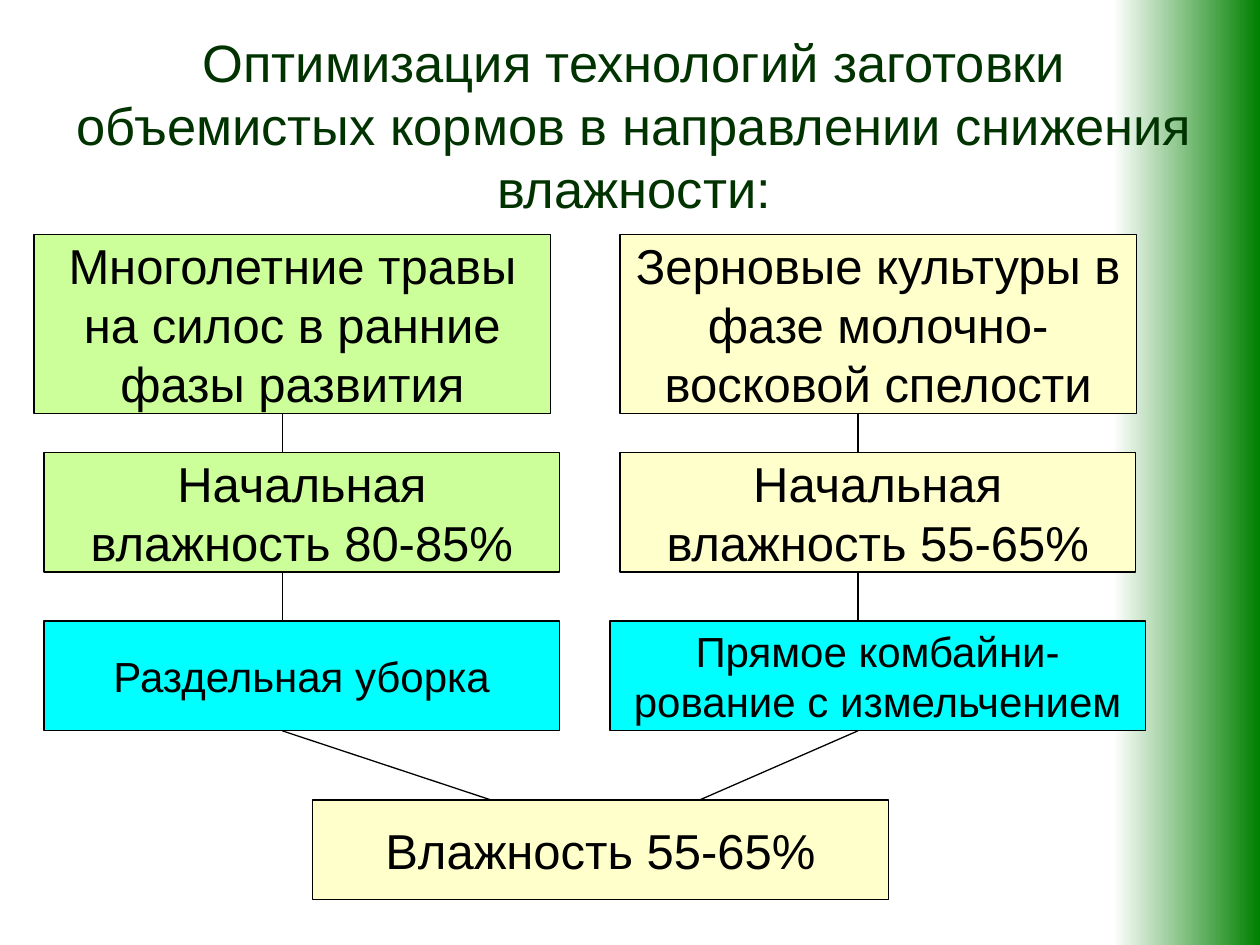
"""Build a slide on lowering moisture in bulk feed harvesting."""
from lxml import etree
from pptx import Presentation
from pptx.dml.color import RGBColor
from pptx.enum.shapes import MSO_CONNECTOR, MSO_SHAPE
from pptx.enum.text import MSO_ANCHOR, PP_ALIGN
from pptx.oxml.ns import qn
from pptx.util import Inches, Pt

WHITE = RGBColor(0xFF, 0xFF, 0xFF)
BLACK = RGBColor(0x00, 0x00, 0x00)
BAND_GREEN = RGBColor(0x00, 0x80, 0x00)
TITLE_GREEN = RGBColor(0x00, 0x33, 0x00)
LIME = RGBColor(0xCC, 0xFF, 0x99)
CREAM = RGBColor(0xFF, 0xFF, 0xCC)
CYAN = RGBColor(0x00, 0xFF, 0xFF)

deck = Presentation()
deck.slide_width = Inches(10)
deck.slide_height = Inches(7.5)
page = deck.slides.add_slide(deck.slide_layouts[6])


def write(box, text, size=28, color=BLACK):
    frame = box.text_frame
    frame.word_wrap = True
    frame.vertical_anchor = MSO_ANCHOR.MIDDLE
    para = frame.paragraphs[0]
    para.alignment = PP_ALIGN.CENTER
    span = para.add_run()
    span.text = text
    span.font.name = "Arial"
    span.font.size = Pt(size)
    span.font.color.rgb = color


band = page.shapes.add_shape(
    MSO_SHAPE.RECTANGLE, Inches(8.83), Inches(0), Inches(1.17), Inches(7.5)
)
band.shadow.inherit = False
band.line.fill.background()
band.fill.gradient()
band.fill.gradient_angle = 0
for stop, color in zip(band.fill.gradient_stops, (WHITE, BAND_GREEN)):
    stop.color.rgb = color

title = page.shapes.add_textbox(Inches(0.35), Inches(0.21), Inches(9.37), Inches(1.55))
write(
    title,
    "Оптимизация технологий заготовки объемистых кормов в направлении снижения влажности:",
    size=30,
    color=TITLE_GREEN,
)

steps = [
    (0.27, 1.86, 4.1, 1.42, LIME, 28, "Многолетние травы на силос в ранние фазы развития"),
    (0.35, 3.59, 4.09, 0.95, LIME, 28, "Начальная влажность 80-85%"),
    (0.35, 4.93, 4.09, 0.87, CYAN, 24, "Раздельная уборка"),
    (4.92, 1.86, 4.1, 1.42, CREAM, 28, "Зерновые культуры в фазе молочно-восковой спелости"),
    (4.92, 3.59, 4.09, 0.95, CREAM, 28, "Начальная влажность 55-65%"),
    (4.84, 4.93, 4.25, 0.87, CYAN, 24, "Прямое комбайни-рование с измельчением"),
    (2.48, 6.35, 4.57, 0.79, CREAM, 28, "Влажность 55-65%"),
]
for left, top, width, height, color, size, text in steps:
    box = page.shapes.add_shape(
        MSO_SHAPE.RECTANGLE, Inches(left), Inches(top), Inches(width), Inches(height)
    )
    box.shadow.inherit = False
    box.fill.solid()
    box.fill.fore_color.rgb = color
    box.line.color.rgb = BLACK
    box.line.width = Pt(0.75)
    write(box, text, size=size)

for column, merge in ((2.24, 3.9), (6.81, 5.55)):
    for start, top, end, bottom in (
        (column, 3.28, column, 3.59),
        (column, 4.54, column, 4.93),
        (column, 5.8, merge, 6.35),
    ):
        link = page.shapes.add_connector(
            MSO_CONNECTOR.STRAIGHT, Inches(start), Inches(top), Inches(end), Inches(bottom)
        )
        link.line.color.rgb = BLACK
        link.line.width = Pt(0.75)
        etree.SubElement(link._element.spPr, qn("a:effectLst"))

deck.save("out.pptx")
